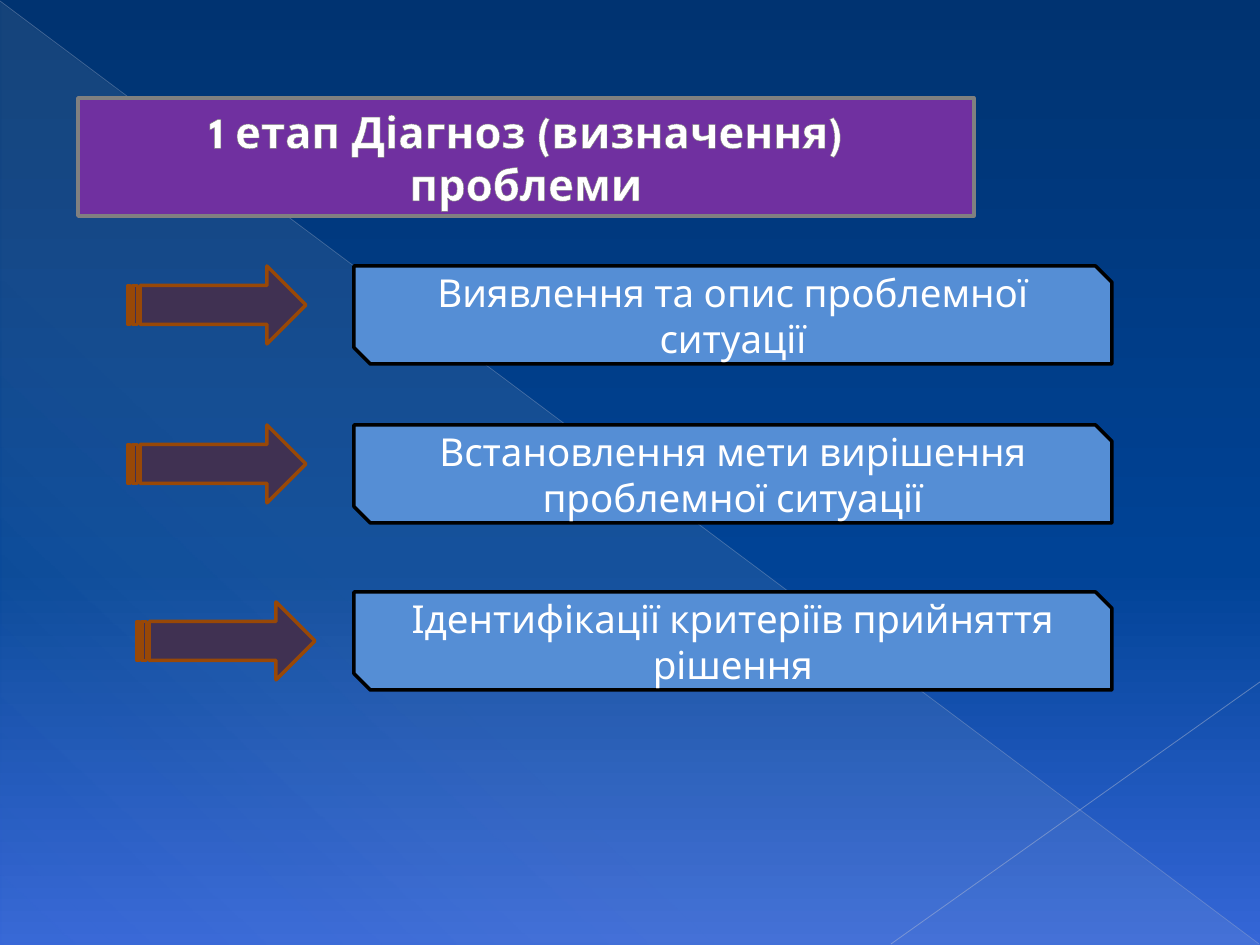
import pptx
import pptx.util
import pptx.dml.color
import pptx.enum.shapes
import pptx.enum.text
import pptx.oxml
import pptx.oxml.ns

PX = 9144000 // 1260
FONT = "League Spartan"
SHAPES = pptx.enum.shapes.MSO_SHAPE
NAMESPACE = pptx.oxml.ns.nsdecls("a")

# Content
TITLE = "1 етап Діагноз (визначення) проблеми"
TITLE_BOX = (78, 98, 896, 118)
# Step text, box top, arrow left, arrow top
STEPS = [
    ("Виявлення та опис проблемної ситуації", 266, 128, 266),
    ("Встановлення мети вирішення проблемної ситуації", 425, 128, 425),
    ("Ідентифікації критеріїв прийняття рішення", 592, 137, 602),
]
STEP_LEFT, STEP_WIDTH, STEP_HEIGHT = 354, 758, 98
ARROW_WIDTH, ARROW_HEIGHT = 178, 78

# Gradient stops: position, colour, opacity (percent)
BACKGROUND_STOPS = [(0, "003371", 100), (60, "004396", 100), (100, "3566D7", 100)]
TRIANGLE_STOPS = [(0, "EEECE1", 10), (70, "EEECE1", 8), (100, "EEECE1", 1)]
# Start x, start y, end x, end y, colour, width, opacity
LINES = [
    (0, 1, 1259, 944, "ADB6CE", 0.39, 35),
    (1260, 682, 891, 944, "B6BED3", 0.47, 45),
]


def color(value):
    return pptx.dml.color.RGBColor.from_string(value)


def emu(*lengths):
    return [length * PX for length in lengths]


def set_gradient(fill, holder, stops, angle):
    fill.gradient()
    gradient = next(holder.iter(pptx.oxml.ns.qn("a:gradFill")))
    for child in list(gradient):
        gradient.remove(child)
    stop_xml = "".join(
        f'<a:gs pos="{position * 1000}"><a:srgbClr val="{value}">'
        f'<a:alpha val="{opacity * 1000}"/></a:srgbClr></a:gs>'
        for position, value, opacity in stops)
    gradient.append(pptx.oxml.parse_xml(f"<a:gsLst {NAMESPACE}>{stop_xml}</a:gsLst>"))
    gradient.append(pptx.oxml.parse_xml(
        f'<a:lin {NAMESPACE} ang="{angle * 60000}" scaled="0"/>'))


def add_box(slide, kind, box, fill, line):
    shape = slide.shapes.add_shape(kind, *emu(*box))
    shape.shadow.inherit = False
    shape.fill.solid()
    shape.fill.fore_color.rgb = color(fill)
    shape.line.color.rgb = color(line)
    shape.line.width = pptx.util.Pt(2)
    return shape


def add_text(shape, text, size, bold=False):
    frame = shape.text_frame
    frame.word_wrap = True
    frame.vertical_anchor = pptx.enum.text.MSO_ANCHOR.MIDDLE
    paragraph = frame.paragraphs[0]
    paragraph.alignment = pptx.enum.text.PP_ALIGN.CENTER
    run = paragraph.add_run()
    run.text = text
    run.font.name = FONT
    run.font.size = pptx.util.Pt(size)
    run.font.bold = bold
    run.font.color.rgb = color("FFFFFF")
    return run


def add_line(slide, start_x, start_y, end_x, end_y, value, width, opacity):
    line = slide.shapes.add_connector(
        pptx.enum.shapes.MSO_CONNECTOR.STRAIGHT, *emu(start_x, start_y, end_x, end_y))
    line.line.color.rgb = color(value)
    line.line.width = pptx.util.Pt(width)
    properties = line._element.spPr
    next(properties.iter(pptx.oxml.ns.qn("a:srgbClr"))).append(
        pptx.oxml.parse_xml(f'<a:alpha {NAMESPACE} val="{opacity * 1000}"/>'))
    properties.append(pptx.oxml.parse_xml(f"<a:effectLst {NAMESPACE}/>"))


def main():
    presentation = pptx.Presentation()
    presentation.slide_width, presentation.slide_height = (
        pptx.util.Inches(10), pptx.util.Inches(7.5))
    slide = presentation.slides.add_slide(presentation.slide_layouts[6])

    # Background with triangle and thin lines
    set_gradient(slide.background.fill, slide._element, BACKGROUND_STOPS, 90)
    triangle = slide.shapes.add_shape(SHAPES.RIGHT_TRIANGLE, *emu(1, 2, 1259, 943))
    triangle.shadow.inherit = False
    triangle.line.fill.background()
    set_gradient(triangle.fill, triangle._element, TRIANGLE_STOPS, 133)
    for line in LINES:
        add_line(slide, *line)

    # Title with outlined letters
    title = add_box(slide, SHAPES.RECTANGLE, TITLE_BOX, "7030A0", "808080")
    title_run = add_text(title, TITLE, 25, bold=True)
    title_run.font._element.insert(0, pptx.oxml.parse_xml(
        f'<a:ln {NAMESPACE} w="10541"><a:solidFill><a:srgbClr val="7D7D7D"/>'
        "</a:solidFill></a:ln>"))

    # Steps, each with its arrow
    for text, top, arrow_left, arrow_top in STEPS:
        step = add_box(slide, SHAPES.SNIP_2_DIAG_RECTANGLE,
                       (STEP_LEFT, top, STEP_WIDTH, STEP_HEIGHT), "558ED5", "000000")
        add_text(step, text, 22)
        add_box(slide, SHAPES.STRIPED_RIGHT_ARROW,
                (arrow_left, arrow_top, ARROW_WIDTH, ARROW_HEIGHT), "403152", "984807")

    presentation.save("out.pptx")


if __name__ == "__main__":
    main()
